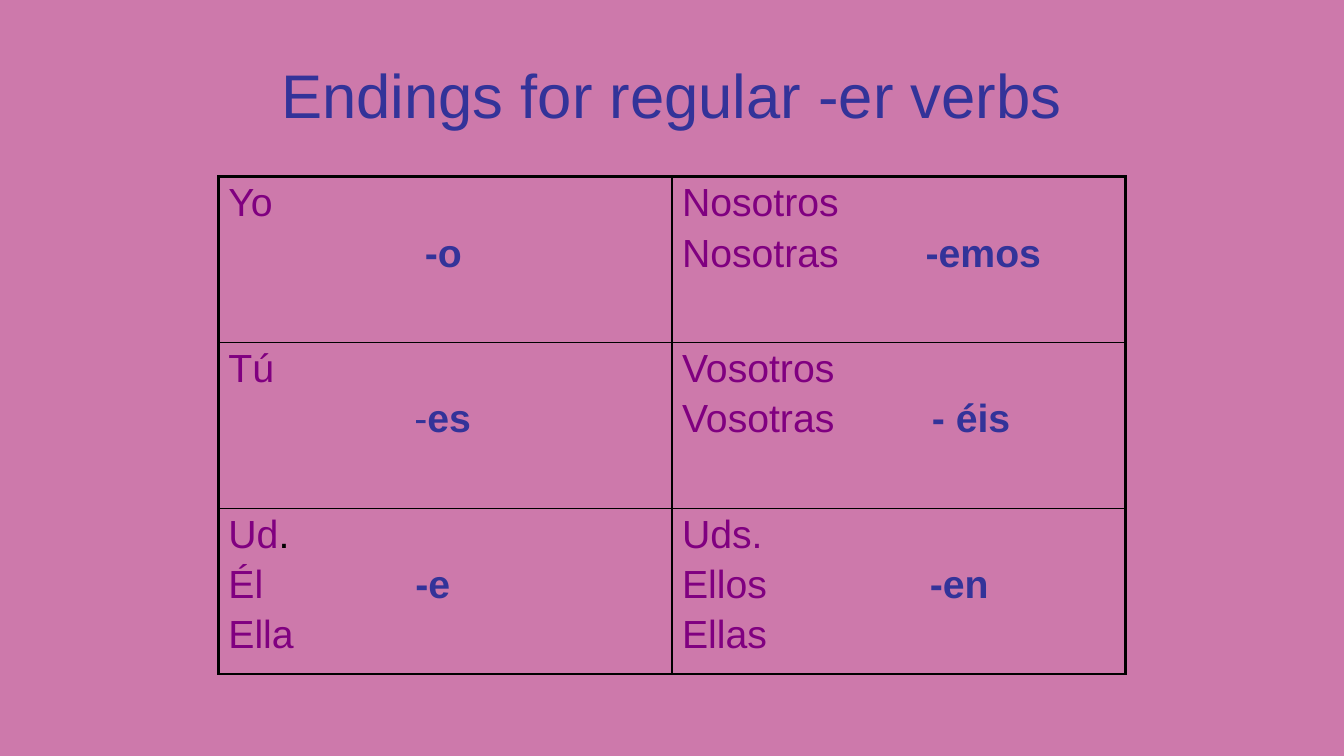
"""Builds a slide with a table of Spanish -er verb endings."""
from dataclasses import dataclass

from pptx import Presentation
from pptx.dml.color import RGBColor
from pptx.enum.text import MSO_ANCHOR, PP_ALIGN
from pptx.oxml.ns import qn
from pptx.util import Emu, Pt
from lxml.etree import SubElement as Sub

PX = 9525
COLORS = {"bg": "CD79AB", "ending": "333399", "pronoun": "800080", "black": "000000"}
FONT = "Arial"
OUTER, INNER = 2.25, 1
COL_W, ROW_H = 432, 158


@dataclass(frozen=True)
class Span:
    text: str
    color: str = "pronoun"
    bold: bool = False


@dataclass(frozen=True)
class Entry:
    lines: list[list[Span]]
    tab: int


def px(n: int) -> Emu:
    return Emu(n * PX)


def ending(text: str) -> Span:
    return Span(text, "ending", True)


TAB = Span("\t")

ENTRIES = [
    [
        Entry([[Span("Yo")], [TAB, ending("-o")]], 187),
        Entry([[Span("Nosotros")], [Span("Nosotras"), TAB, ending("-emos")]], 232),
    ],
    [
        Entry([[Span("Tú")], [TAB, Span("-", "ending"), ending("es")]], 177),
        Entry([[Span("Vosotros")], [Span("Vosotras"), TAB, ending("- éis")]], 238),
    ],
    [
        Entry([[Span("Ud"), Span(".", "black")],
               [Span("Él"), TAB, ending("-e")], [Span("Ella")]], 178),
        Entry([[Span("Uds.")], [Span("Ellos"), TAB, ending("-en")], [Span("Ellas")]], 236),
    ],
]


def add_run(p, span: Span, size: int) -> None:
    r = p.add_run()
    r.text = span.text
    r.font.name, r.font.size, r.font.bold = FONT, Pt(size), span.bold
    r.font.color.rgb = RGBColor.from_string(COLORS[span.color])


def add_tab_stop(p, pos: int) -> None:
    stops = Sub(p._p.get_or_add_pPr(), qn("a:tabLst"))
    Sub(stops, qn("a:tab"), pos=str(px(pos)), algn="l")


def set_borders(cell, widths: dict[str, float]) -> None:
    tc_pr = cell._tc.get_or_add_tcPr()
    for side, width in widths.items():
        ln = Sub(tc_pr, qn(f"a:ln{side}"), w=str(Pt(width)))
        Sub(Sub(ln, qn("a:solidFill")), qn("a:srgbClr"), val=COLORS["black"])


def fill_cell(cell, entry: Entry) -> None:
    tf = cell.text_frame
    for i, line in enumerate(entry.lines):
        p = tf.add_paragraph() if i else tf.paragraphs[0]
        p.space_before = Pt(4.6 if i else 0)
        if TAB in line:
            add_tab_stop(p, entry.tab)
        for span in line:
            add_run(p, span, 28)


def add_title(s) -> None:
    sp = s.shapes.title
    sp.left, sp.top, sp.width, sp.height = px(64), px(29), px(1152), px(120)
    tf = sp.text_frame
    tf.vertical_anchor = MSO_ANCHOR.MIDDLE
    p = tf.paragraphs[0]
    p.alignment = PP_ALIGN.CENTER
    add_run(p, Span("Endings for regular -er verbs", "ending"), 44)


def add_endings_table(s) -> None:
    rows, cols = len(ENTRIES), len(ENTRIES[0])
    frame = s.shapes.add_table(rows, cols, px(208), px(168),
                               px(COL_W * cols), px(ROW_H * rows))
    table = frame.table
    table.first_row = table.horz_banding = False
    for row in table.rows:
        row.height = px(ROW_H)
    for r, entries in enumerate(ENTRIES):
        for c, entry in enumerate(entries):
            cell = table.cell(r, c)
            fill_cell(cell, entry)
            set_borders(cell, {
                "L": OUTER if c == 0 else INNER,
                "R": OUTER if c == cols - 1 else INNER,
                "T": OUTER if r == 0 else INNER,
                "B": OUTER if r == rows - 1 else INNER,
            })
            cell.fill.background()


def main() -> None:
    prs = Presentation()
    prs.slide_width, prs.slide_height = px(1280), px(720)
    s = prs.slides.add_slide(prs.slide_layouts[5])
    bg = s.background.fill
    bg.solid()
    bg.fore_color.rgb = RGBColor.from_string(COLORS["bg"])
    add_title(s)
    add_endings_table(s)
    prs.save("out.pptx")


if __name__ == "__main__":
    main()
